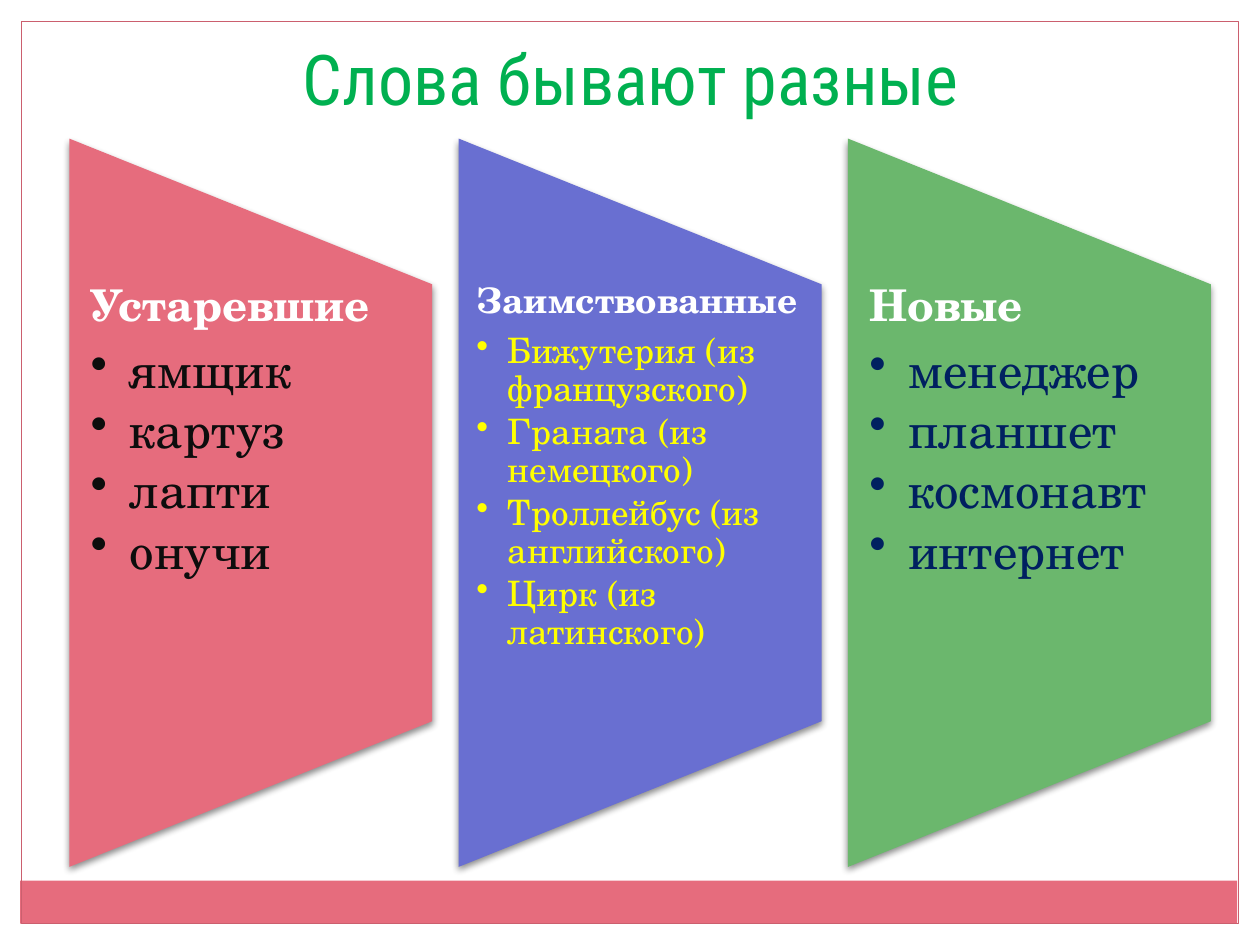
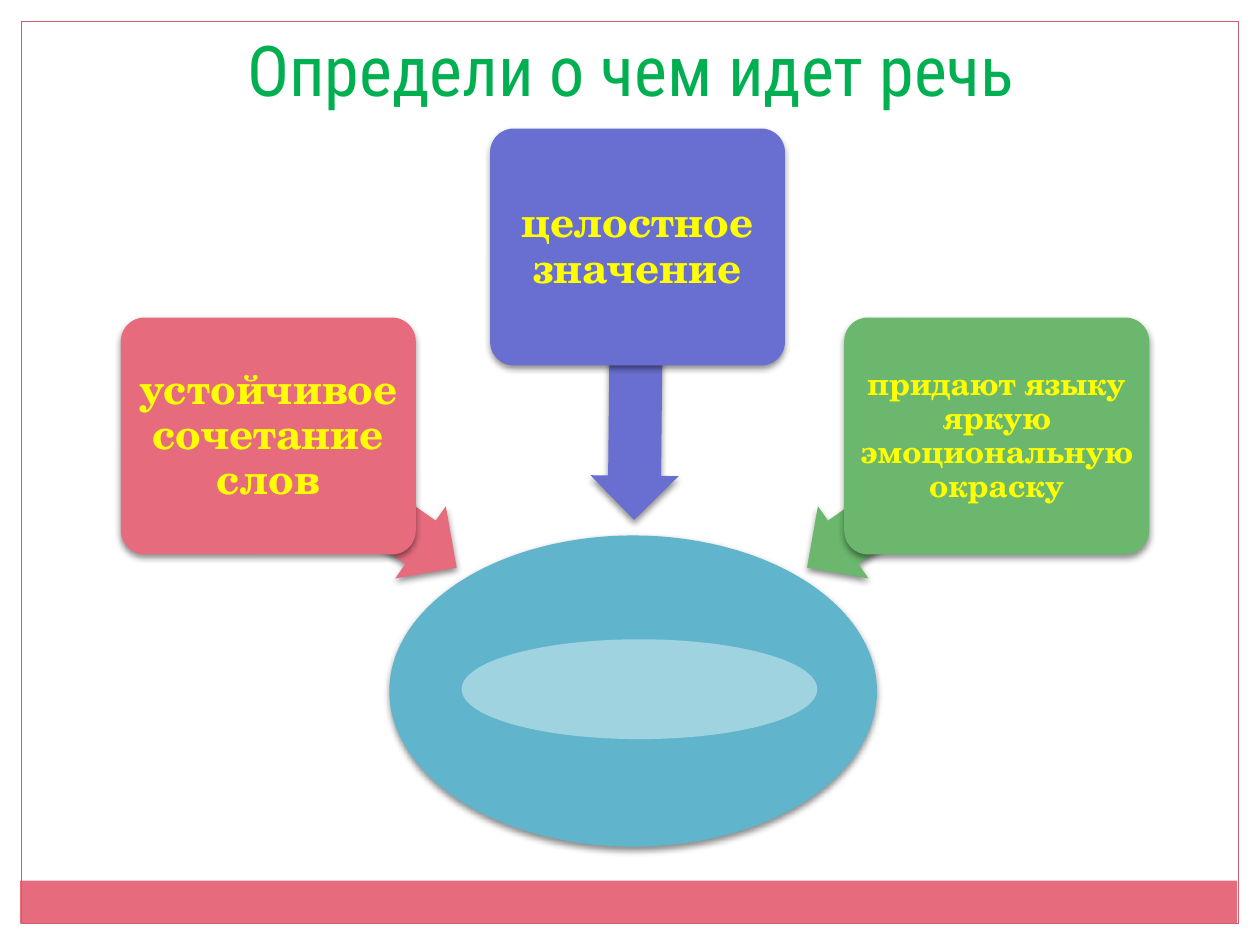
from lxml import etree
from pptx import Presentation
from pptx.dml.color import RGBColor
from pptx.enum.shapes import MSO_SHAPE
from pptx.enum.text import MSO_ANCHOR, MSO_AUTO_SIZE, PP_ALIGN
from pptx.oxml import parse_xml
from pptx.oxml.ns import nsdecls, qn
from pptx.util import Inches, Pt

# Shared look
ROSE, BLUE, GREEN, TEAL = "E66C7D", "696FD1", "6BB76D", "60B5CC"
FRAME, PALE_TEAL, TITLE_GREEN = "CB5F6E", "A0D3E0", "00B050"
WHITE, YELLOW, BLACK, NAVY = "FFFFFF", "FFFF00", "0D0D0D", "002060"
TITLE_FONT, BODY_FONT = "Roboto Condensed", "TeX Gyre Schola"

# Slide 1: heading, words, fill, word colour, heading size, word size, inset, indent
WORDS_TITLE = "Слова бывают разные"
WORD_GROUPS = [
    ("Устаревшие", ["ямщик", "картуз", "лапти", "онучи"],
     ROSE, BLACK, 25, 28, 0.17, 0.31),
    ("Заимствованные",
     ["Бижутерия (из французского)", "Граната (из немецкого)",
      "Троллейбус (из английского)", "Цирк (из латинского)"],
     BLUE, YELLOW, 20, 20, 0.14, 0.25),
    ("Новые", ["менеджер", "планшет", "космонавт", "интернет"],
     GREEN, NAVY, 25, 28, 0.17, 0.31),
]

# Slide 2: text, size, inset, fill, (left, top, width) of box, then arrow
RIDDLE_TITLE = "Определи о чем идет речь"
CLUES = [
    ("устойчивое сочетание слов", 24, 0.05, ROSE, (0.96, 2.52, 2.34),
     (1.96, 3.63, 1.83), 215),
    ("целостное значение", 24, 0.05, BLUE, (3.89, 1.02, 2.34),
     (3.96, 2.69, 2.17), 270.6),
    ("придают языку яркую эмоциональную окраску", 18, 0.04, GREEN, (6.7, 2.52, 2.42),
     (6.24, 3.63, 1.83), 325),
]


def rgb(color):
    return RGBColor.from_string(color)


def add_shape(slide, kind, left, top, width, height, fill=None, line=None,
              line_width=0.75, rotation=0, adjustments=(), shadow=False):
    shape = slide.shapes.add_shape(
        kind, Inches(left), Inches(top), Inches(width), Inches(height))
    shape.rotation = rotation
    for index, value in enumerate(adjustments):
        shape.adjustments[index] = value
    if fill:
        shape.fill.solid()
        shape.fill.fore_color.rgb = rgb(fill)
    else:
        shape.fill.background()
    if line:
        shape.line.color.rgb = rgb(line)
        shape.line.width = Pt(line_width)
    else:
        shape.line.fill.background()
    shape.shadow.inherit = False
    if shadow:
        effects = shape.element.spPr.find(qn("a:effectLst"))
        effects.append(parse_xml(
            f'<a:outerShdw {nsdecls("a")} blurRad="{Pt(4)}" dist="{Pt(2)}" '
            'dir="5400000" rotWithShape="0"><a:srgbClr val="000000">'
            '<a:alpha val="45000"/></a:srgbClr></a:outerShdw>'))
    return shape


def set_frame(frame, anchor, horizontal, vertical):
    frame.word_wrap = True
    frame.auto_size = MSO_AUTO_SIZE.NONE
    frame.vertical_anchor = anchor
    frame.margin_left = frame.margin_right = Inches(horizontal)
    frame.margin_top = frame.margin_bottom = Inches(vertical)


def write(frame, text, size, color, font=BODY_FONT, bold=False,
          align=PP_ALIGN.LEFT, line_spacing=0.9, space_after=0, bullet_indent=0):
    """Add one paragraph; space_after is a share of the text size."""
    paragraph = frame.paragraphs[0] if not frame.text else frame.add_paragraph()
    if bullet_indent:
        properties = paragraph._p.get_or_add_pPr()
        properties.set("marL", str(Inches(bullet_indent)))
        properties.set("indent", str(-Inches(bullet_indent)))
        etree.SubElement(properties, qn("a:buChar"), char="•")
    paragraph.alignment = align
    paragraph.line_spacing = line_spacing
    paragraph.space_before = Pt(0)
    paragraph.space_after = Pt(size * space_after)
    run = paragraph.add_run()
    run.text = text
    run.font.name = font
    run.font.size = Pt(size)
    run.font.bold = bold
    run.font.color.rgb = rgb(color)


def add_slide(presentation, title, title_top):
    slide = presentation.slides.add_slide(presentation.slide_layouts[5])
    shape = slide.shapes.title
    shape.left, shape.top = Inches(0.16), Inches(title_top)
    shape.width, shape.height = Inches(9.69), Inches(0.77)
    set_frame(shape.text_frame, MSO_ANCHOR.TOP, 0.1, 0.05)
    write(shape.text_frame, title, 40, TITLE_GREEN, font=TITLE_FONT,
          align=PP_ALIGN.CENTER, line_spacing=1.0)
    return slide


def add_master_frame(presentation, slide):
    """Draw the bottom band and the border, then move them to the master."""
    band = add_shape(slide, MSO_SHAPE.RECTANGLE, 0.16, 6.99, 9.66, 0.34, fill=ROSE)
    border = add_shape(slide, MSO_SHAPE.RECTANGLE, 0.17, 0.17, 9.66, 7.16, line=FRAME)
    tree = presentation.slide_master.shapes.element
    for position, shape in enumerate((band, border), start=2):
        tree.insert(position, shape.element)


def build_word_groups(slide):
    length, width, step = 5.78, 2.88, 3.09
    for column, group in enumerate(WORD_GROUPS):
        heading, words, fill, color, heading_size, word_size, inset, indent = group
        left = 0.55 + column * step
        add_shape(slide, MSO_SHAPE.FLOWCHART_MANUAL_OPERATION,
                  left - (length - width) / 2, 2.55, length, width,
                  fill=fill, rotation=270, shadow=True)
        box = slide.shapes.add_textbox(
            Inches(left), Inches(2.25), Inches(width), Inches(3.47))
        frame = box.text_frame
        set_frame(frame, MSO_ANCHOR.TOP, inset, 0)
        write(frame, heading, heading_size, WHITE, bold=True, space_after=0.35)
        for word in words:
            write(frame, word, word_size, color, space_after=0.15, bullet_indent=indent)


def build_riddle(slide):
    add_shape(slide, MSO_SHAPE.OVAL, 3.09, 4.25, 3.87, 2.47, fill=TEAL, shadow=True)
    for text, size, inset, fill, box_place, arrow_place, angle in CLUES:
        add_shape(slide, MSO_SHAPE.LEFT_ARROW, *arrow_place, 0.7, fill=fill,
                  rotation=angle, adjustments=(0.6, 0.5), shadow=True)
        box = add_shape(slide, MSO_SHAPE.ROUNDED_RECTANGLE, *box_place, 1.88,
                        fill=fill, adjustments=(0.1,), shadow=True)
        set_frame(box.text_frame, MSO_ANCHOR.MIDDLE, inset, inset)
        write(box.text_frame, text, size, YELLOW, bold=True, align=PP_ALIGN.CENTER)
    add_shape(slide, MSO_SHAPE.OVAL, 3.67, 5.08, 2.81, 0.78,
              fill=PALE_TEAL, line=PALE_TEAL, line_width=0.9)


def main():
    presentation = Presentation()
    presentation.slide_width, presentation.slide_height = Inches(10), Inches(7.5)
    words_slide = add_slide(presentation, WORDS_TITLE, 0.23)
    add_master_frame(presentation, words_slide)
    build_word_groups(words_slide)
    build_riddle(add_slide(presentation, RIDDLE_TITLE, 0.16))
    presentation.save("out.pptx")


if __name__ == "__main__":
    main()
